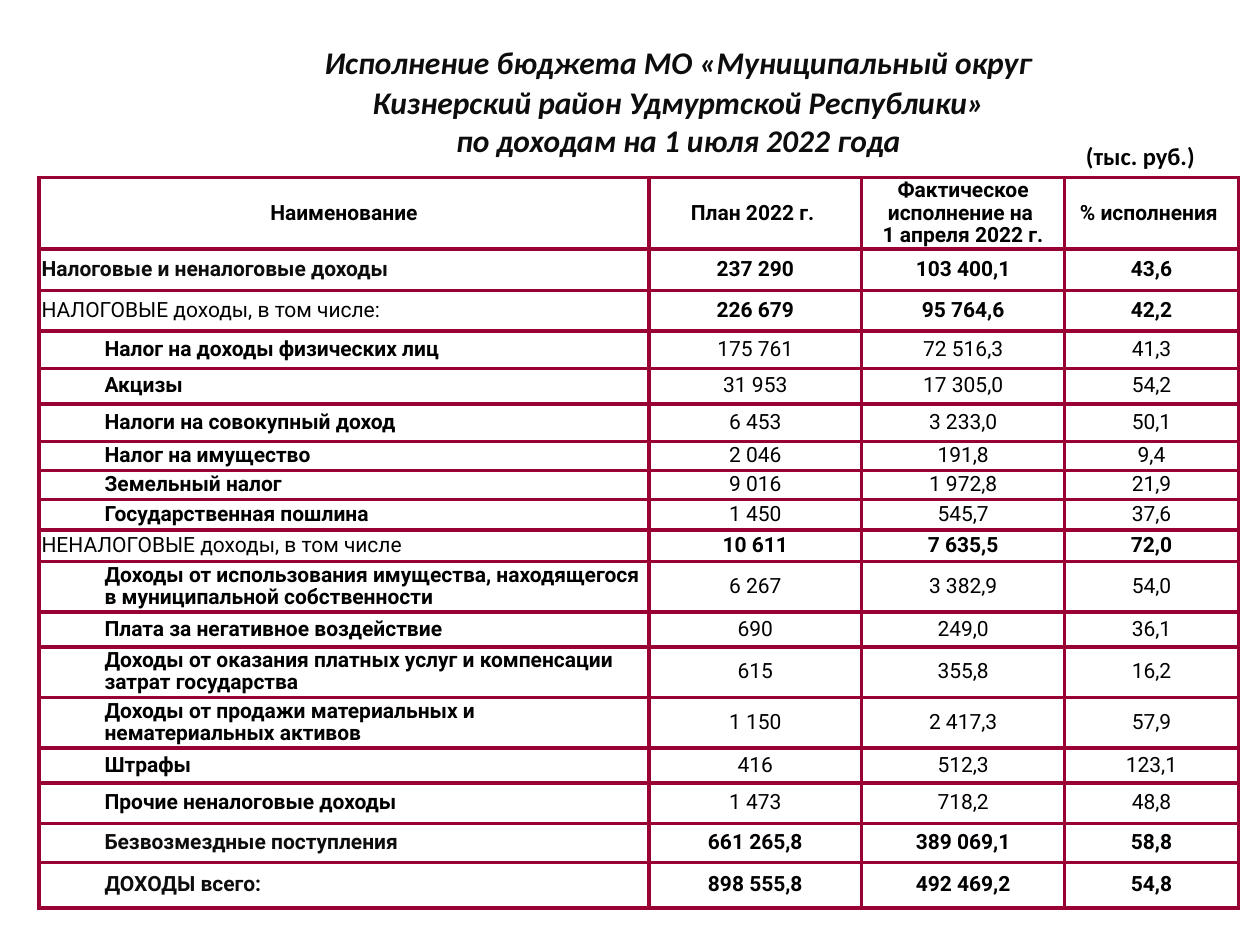
"""Build the budget revenue slide: a title, a unit label and a table."""
from lxml import etree
from pptx import Presentation, util as u
from pptx.dml.color import RGBColor
from pptx.enum import text
from pptx.oxml import ns

HEADS = ["Наименование", "План 2022 г. ",
         "Фактическое исполнение на \n1 апреля 2022 г.", "% исполнения "]
ROWS = [
    ("top", 0.33, "Налоговые и неналоговые доходы", "237 290", "103 400,1", "43,6"),
    ("part", 0.32, "НАЛОГОВЫЕ доходы, в том числе:", "226 679", "95 764,6", "42,2"),
    ("item", 0.3, "Налог на доходы физических лиц", "175 761", "72 516,3", "41,3"),
    ("item", 0.28, "Акцизы", "31 953", "17 305,0", "54,2"),
    ("item", 0.3, "Налоги на совокупный доход", "6 453", "3 233,0", "50,1"),
    ("item", 0.23, "Налог на имущество", "2 046", "191,8", "9,4"),
    ("item", 0.23, "Земельный налог", "9 016", "1 972,8", "21,9"),
    ("item", 0.24, "Государственная пошлина", "1 450", "545,7", "37,6"),
    ("part", 0.25, "НЕНАЛОГОВЫЕ доходы, в том числе", "10 611", "7 635,5", "72,0"),
    ("item", 0.4, "Доходы от использования имущества, находящегося "
     "в муниципальной собственности", "6 267", "3 382,9", "54,0"),
    ("item", 0.28, "Плата за негативное воздействие", "690", "249,0", "36,1"),
    ("item", 0.4, "Доходы от оказания платных услуг и компенсации "
     "затрат государства", "615", "355,8", "16,2"),
    ("item", 0.4, "Доходы от продажи материальных и "
     "нематериальных активов", "1 150", "2 417,3", "57,9"),
    ("item", 0.28, "Штрафы", "416", "512,3", "123,1"),
    ("item", 0.32, "Прочие неналоговые доходы", "1 473", "718,2", "48,8"),
    ("sum", 0.31, "Безвозмездные поступления", "661 265,8", "389 069,1", "58,8"),
    ("sum", 0.36, "ДОХОДЫ всего:", "898 555,8", "492 469,2", "54,8"),
]
TITLE = ["Исполнение бюджета МО «Муниципальный округ",
         "Кизнерский район Удмуртской Республики»",
         "по доходам на 1 июля 2022 года"]
UNIT = "(тыс. руб.)"
COLS = [4.84, 1.69, 1.61, 1.38]
HEAD_H = 0.56
THEME = {"head": "Calibri", "body": "Roboto", "ink": "0D0D0D", "black": "000000",
         "paper": "FFFFFF", "rule": "990033", "line": 2.25,
         "title": 18, "unit": 14, "cell": 12}


def style(par, face, size, ink, bold=True, slant=False):
    font = par.font
    font.name, font.size = THEME[face], u.Pt(THEME[size])
    font.bold, font.italic = bold, slant
    font.color.rgb = RGBColor.from_string(THEME[ink])


def indent(par, left):
    props = par._p.get_or_add_pPr()
    props.set("marL", str(u.Inches(left)))
    props.set("indent", "0")


def frame(cell):
    props = cell._tc.get_or_add_tcPr()
    for side in ("lnL", "lnR", "lnT", "lnB"):
        line = etree.SubElement(props, ns.qn("a:" + side), w=str(u.Pt(THEME["line"])))
        fill = etree.SubElement(line, ns.qn("a:solidFill"))
        etree.SubElement(fill, ns.qn("a:srgbClr"), val=THEME["rule"])
    cell.fill.solid()
    cell.fill.fore_color.rgb = RGBColor.from_string(THEME["paper"])


def write(cell, words, kind, label):
    frame(cell)
    cell.margin_left = cell.margin_right = u.Inches(0.02)
    cell.margin_top = cell.margin_bottom = u.Inches(0.02)
    cell.vertical_anchor = text.MSO_ANCHOR.MIDDLE
    cell.text = words
    bold = kind != ("part" if label else "item")
    ink = "ink" if label and kind in ("top", "sum") else "black"
    for par in cell.text_frame.paragraphs:
        style(par, "body", "cell", ink, bold)
        par.line_spacing = 0.9
        left = label and kind != "head"
        par.alignment = text.PP_ALIGN.LEFT if left else text.PP_ALIGN.CENTER
        if label and kind in ("item", "sum"):
            par.level = 1
            indent(par, 0.5)


def add_title(slide):
    box = slide.shapes.title
    box.left, box.top = u.Inches(0.51), u.Inches(0.21)
    box.width, box.height = u.Inches(9.1), u.Inches(1.11)
    area = box.text_frame
    area.text = "\n".join(TITLE)
    area.word_wrap = True
    area.auto_size = text.MSO_AUTO_SIZE.NONE
    area.vertical_anchor = text.MSO_ANCHOR.TOP
    area.margin_top = u.Inches(0.13)
    for par in area.paragraphs:
        style(par, "head", "title", "ink", slant=True)
        par.alignment = text.PP_ALIGN.CENTER
        par.line_spacing = 1.0
        par.space_before = u.Pt(0)
    area.paragraphs[0].space_after = u.Pt(1.5)
    indent(area.paragraphs[0], 0.65)


def add_unit(slide):
    box = slide.shapes.add_textbox(u.Inches(8.52), u.Inches(1.07),
                                   u.Inches(1.33), u.Inches(0.34))
    area = box.text_frame
    area.word_wrap = True
    area.text = UNIT
    style(area.paragraphs[0], "head", "unit", "black")


def add_grid(slide):
    rows = [("head", HEAD_H, *HEADS)] + ROWS
    tall = sum(row[1] for row in rows)
    grid = slide.shapes.add_table(len(rows), len(COLS), u.Inches(0.31), u.Inches(1.41),
                                  u.Inches(sum(COLS)), u.Inches(tall)).table
    grid.first_row = grid.horz_banding = False
    for col, wide in zip(grid.columns, COLS):
        col.width = u.Inches(wide)
    for r, (kind, high, *words) in enumerate(rows):
        grid.rows[r].height = u.Inches(high)
        for c, word in enumerate(words):
            write(grid.cell(r, c), word, kind, c == 0)


def main():
    deck = Presentation()
    deck.slide_width, deck.slide_height = u.Inches(10), u.Inches(7.5)
    slide = deck.slides.add_slide(deck.slide_layouts[5])
    add_grid(slide)
    add_title(slide)
    add_unit(slide)
    deck.save("out.pptx")


if __name__ == "__main__":
    main()
